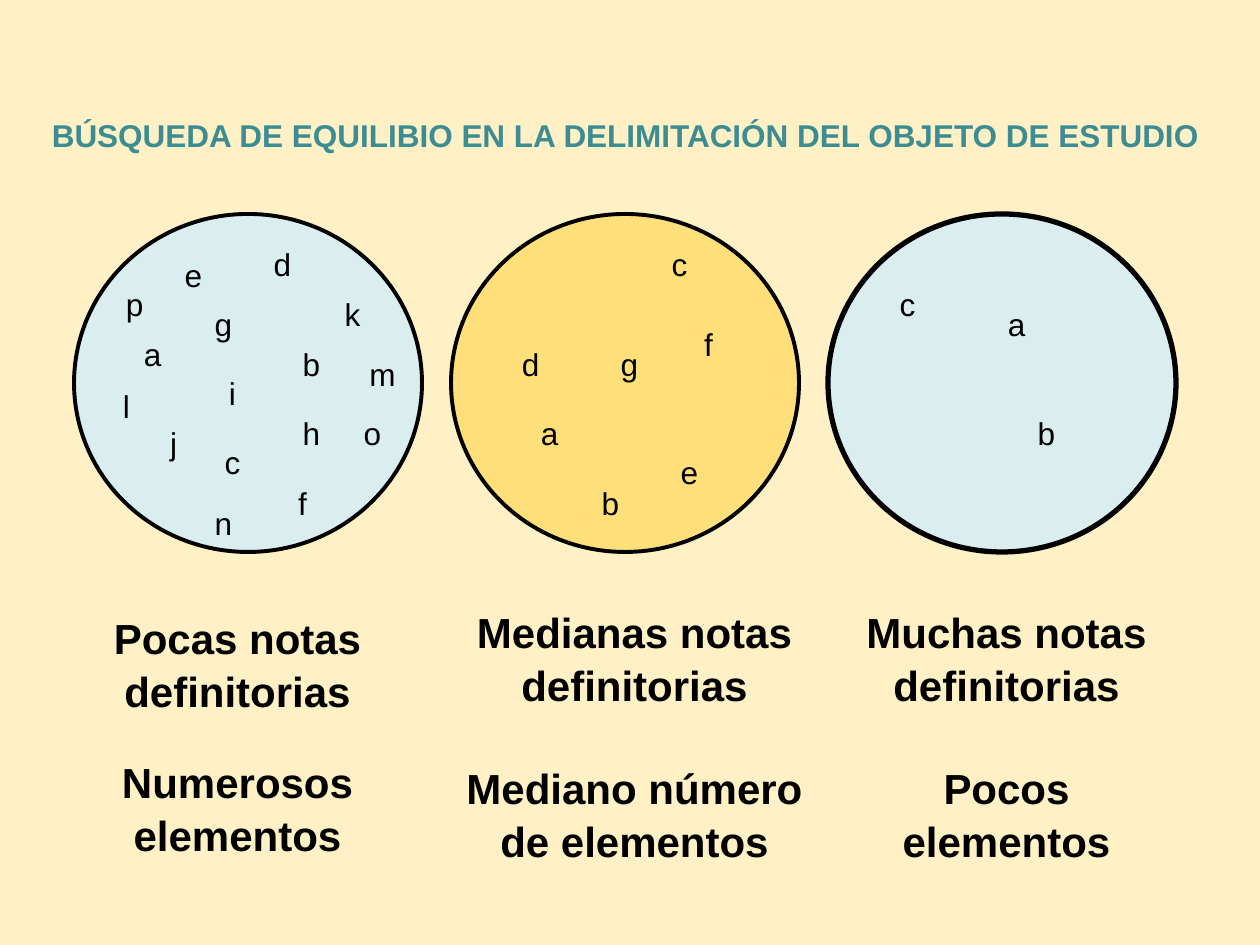
from pptx import Presentation
from pptx.dml.color import RGBColor
from pptx.enum import shapes, text
from pptx.util import Emu, Pt

PX = 914400 / 126  # EMU per px

BACKGROUND, BLUE, YELLOW = "FFF1C5", "DAEDEF", "FFDF79"
BLACK, TEAL = "000000", "3C8C93"


def px(*lengths):
    return [Emu(round(length * PX)) for length in lengths]


def color(value):
    return RGBColor.from_string(value)


def write(frame, content, size=18, bold=False, ink=BLACK, gap=0, spacing=None):
    """Write one centred paragraph per line, with a gap in points between them."""
    frame.word_wrap = True
    frame.vertical_anchor = text.MSO_ANCHOR.MIDDLE
    for index, line in enumerate(content.split("\n")):
        paragraph = frame.add_paragraph() if index else frame.paragraphs[0]
        paragraph.alignment = text.PP_ALIGN.CENTER
        paragraph.line_spacing = spacing
        if index:
            paragraph.space_before = Pt(gap)
        run = paragraph.add_run()
        run.text = line
        run.font.name = "Arial"
        run.font.size = Pt(size)
        run.font.bold = bold
        run.font.color.rgb = color(ink)


class Board:
    LETTER_WIDTH, LETTER_HEIGHT = 59, 39

    def __init__(self, slide):
        self.slide = slide
        slide.background.fill.solid()
        slide.background.fill.fore_color.rgb = color(BACKGROUND)

    def circle(self, left, top, width, height, fill, line_width):
        shape = self.slide.shapes.add_shape(
            shapes.MSO_SHAPE.OVAL, *px(left, top, width, height))
        shape.shadow.inherit = False
        shape.fill.solid()
        shape.fill.fore_color.rgb = color(fill)
        shape.line.color.rgb = color(BLACK)
        shape.line.width = Pt(line_width)

    def label(self, left, top, width, height, content, **style):
        box = self.slide.shapes.add_textbox(*px(left, top, width, height))
        write(box.text_frame, content, **style)
        return box

    def letter(self, left, top, content, fill=None):
        box = self.label(left, top, self.LETTER_WIDTH, self.LETTER_HEIGHT, content)
        frame = box.text_frame
        frame.margin_left = frame.margin_right = 0
        frame.margin_top = frame.margin_bottom = 0
        if fill:
            box.fill.solid()
            box.fill.fore_color.rgb = color(fill)


def main():
    presentation = Presentation()
    presentation.slide_width, presentation.slide_height = px(1260, 945)
    board = Board(presentation.slides.add_slide(presentation.slide_layouts[6]))

    # Title
    board.label(35, 55, 1181, 159,
                "BÚSQUEDA DE EQUILIBIO EN LA DELIMITACIÓN DEL OBJETO DE ESTUDIO",
                bold=True, ink=TEAL)

    # Circles, evenly spaced
    circles = [(BLUE, 2.25), (YELLOW, 2.25), (BLUE, 3)]
    for column, (fill, line_width) in enumerate(circles):
        board.circle(74 + 377 * column, 214, 348, 338, fill, line_width)

    # Captions: left, top, width, height, gap, text
    captions = [
        (44, 611, 387, 248, 22, "Pocas notas definitorias\nNumerosos elementos"),
        (441, 611, 387, 248, 29, "Medianas notas definitorias\nMediano número de elementos"),
        (828, 616, 357, 238, 29, "Muchas notas definitorias\nPocos elementos"),
    ]
    for left, top, width, height, gap, content in captions:
        board.label(left, top, width, height, content,
                    size=24, bold=True, gap=gap, spacing=1.05)

    # Elements inside each circle
    letters = [
        # Many elements
        (203, 373, "i"), (282, 413, "h"), (194, 304, "g"), (273, 483, "f"),
        (164, 255, "e"), (253, 244, "d"), (203, 442, "c"), (282, 344, "b"),
        (123, 334, "a"), (105, 284, "p"), (343, 413, "o"), (194, 503, "n"),
        (353, 354, "m"), (97, 386, "l"), (323, 294, "k"), (144, 423, "j"),
        # Medium number
        (600, 344, "g"), (679, 324, "f"), (660, 452, "e"), (501, 344, "d"),
        (650, 244, "c", YELLOW), (581, 483, "b"), (520, 413, "a"),
        # Few elements
        (878, 284, "c", BLUE), (1017, 413, "b"), (987, 304, "a"),
    ]
    for letter in letters:
        board.letter(*letter)

    presentation.save("out.pptx")


if __name__ == "__main__":
    main()
